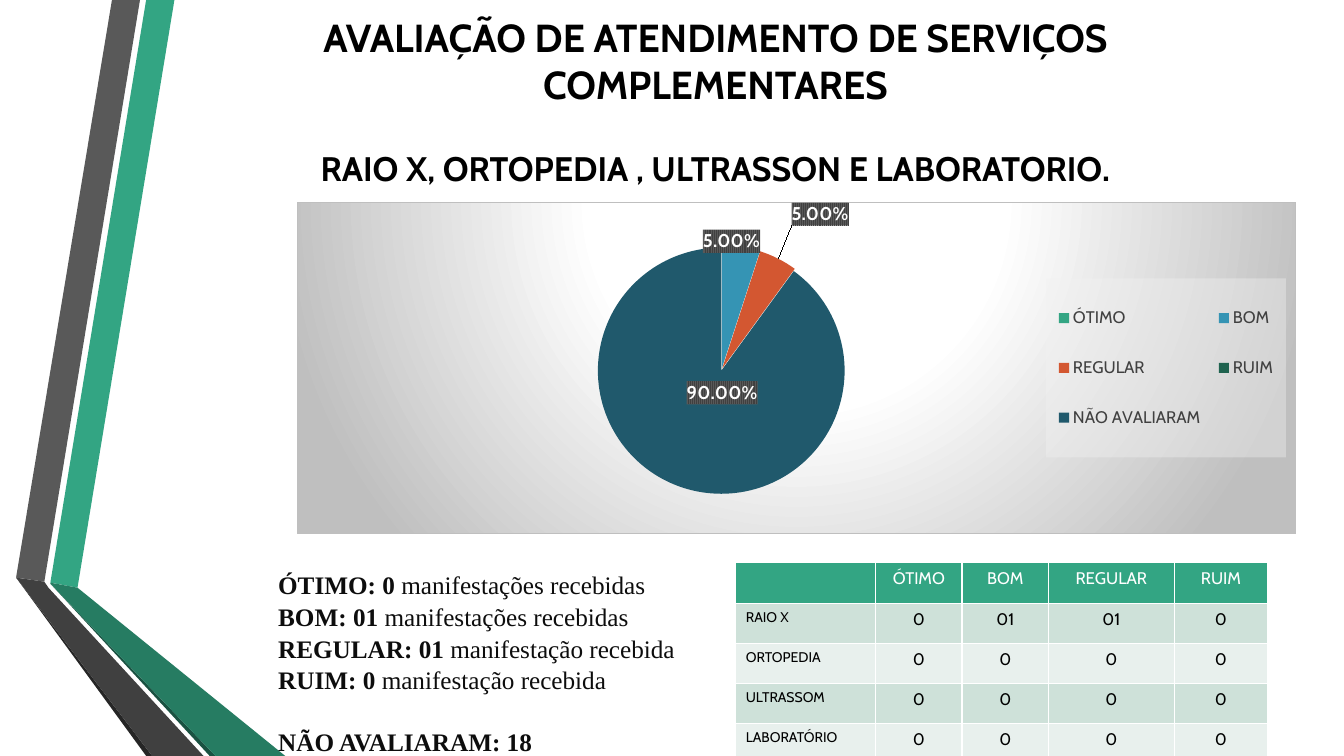
from copy import deepcopy
from dataclasses import dataclass

from pptx import Presentation, oxml, util as u
from pptx.chart.data import CategoryChartData
from pptx.dml.color import RGBColor
from pptx.enum import chart as ch, text as tx
from pptx.oxml.ns import nsdecls, qn

Pt = u.Pt


@dataclass(frozen=True)
class Theme:
    sans: str = "Cabin"
    serif: str = "Times New Roman"
    black: str = "000000"
    ink: str = "0D0D0D"
    white: str = "FFFFFF"
    green: str = "33A583"
    green_dark: str = "267C62"
    green_deep: str = "1A5242"
    gray: str = "595959"
    gray_dark: str = "404040"
    gray_deep: str = "262626"
    silver: str = "BFBFBF"
    legend_back: str = "F2F2F2"
    bands: tuple = ("CEE1D9", "E8F0ED")
    slices: tuple = ("33A583", "3594B4", "D35731", "1F634F", "20596C")
    heading: float = 27.9
    subheading: float = 24.3
    body: float = 18
    label: float = 13.3
    cell: float = 12
    row_name: float = 10


THEME = Theme()

RIBBONS = [
    (THEME.green, [(36, 416.2), (55.4, 419.8), (124.6, 0), (104.4, 0)]),
    (THEME.gray, [(100, 0), (80, 0), (11.5, 412.6), (31.7, 415.5)]),
    (THEME.gray_deep, [(11.5, 412.6), (104.4, 540), (108.7, 540)]),
    (THEME.green_deep, [(36, 416.9), (149.8, 540), (154, 540)]),
    (THEME.green_dark, [(36, 416.9), (154, 540), (203.8, 540), (55.4, 419.8), (36, 416.2)]),
    (THEME.gray_dark, [(145.4, 540), (34.6, 419.8), (31.7, 415.5), (11.5, 412.6), (108.7, 540)]),
]
RATINGS = {"ÓTIMO": 0, "BOM": 5, "REGULAR": 5, "RUIM": 0, "NÃO AVALIARAM": 90}
# Offset of each visible label from its slice centre, as a share of the chart
LABEL_OFFSETS = {1: (0, -0.2), 2: (0.07, -0.3), 4: (0.02, -0.11)}
COUNTS = [
    ("ÓTIMO: 0 ", "manifestações recebidas"),
    ("BOM: 01 ", "manifestações recebidas"),
    ("REGULAR: 01 ", "manifestação recebida"),
    ("RUIM: 0 ", "manifestação recebida"),
    ("NÃO AVALIARAM: 18", ""),
]
SERVICES = [
    ("", "ÓTIMO", "BOM", "REGULAR", "RUIM"),
    ("RAIO X", "0", "01", "01", "0"),
    ("ORTOPEDIA", "0", "0", "0", "0"),
    ("ULTRASSOM", "0", "0", "0", "0"),
    ("LABORATÓRIO", "0", "0", "0", "0"),
]


def xml(tag, inner=""):
    return oxml.parse_xml(f"<{tag} {nsdecls('a', 'c')}>{inner}</{tag}>")


def solid(color, extra=""):
    return f'<a:solidFill><a:srgbClr val="{color}">{extra}</a:srgbClr></a:solidFill>'


def manual_layout(x, y, size=None, inner=False):
    parts = '<c:layoutTarget val="inner"/>' if inner else ""
    if size:
        parts += '<c:xMode val="edge"/><c:yMode val="edge"/>'
    parts += f'<c:x val="{x}"/><c:y val="{y}"/>'
    if size:
        parts += f'<c:w val="{size[0]}"/><c:h val="{size[1]}"/>'
    return xml("c:layout", f"<c:manualLayout>{parts}</c:manualLayout>")


def set_font(font, size, color, name=THEME.sans, bold=False):
    font.size, font.name, font.bold = Pt(size), name, bold
    font.color.rgb = RGBColor.from_string(color)


def write(paragraph, words, align=None, **style):
    run = paragraph.add_run()
    run.text = words
    set_font(run.font, **style)
    if align is not None:
        paragraph.alignment = align


def place(shape, left, top, width, height):
    shape.left, shape.top, shape.width, shape.height = map(Pt, (left, top, width, height))
    frame = shape.text_frame
    frame.word_wrap, frame.auto_size = True, tx.MSO_AUTO_SIZE.NONE
    return frame


def add_ribbons(slide):
    """Draw the folded ribbons behind everything else."""
    for depth, (color, (start, *rest)) in enumerate(RIBBONS, 2):
        builder = slide.shapes.build_freeform(*map(Pt, start))
        builder.add_line_segments([tuple(map(Pt, point)) for point in rest], close=True)
        ribbon = builder.convert_to_shape()
        ribbon.shadow.inherit = False
        ribbon.fill.solid()
        ribbon.fill.fore_color.rgb = RGBColor.from_string(color)
        ribbon.line.fill.background()
        slide.shapes.element.insert(depth, ribbon.element)


def fill_title(title):
    frame = place(title, 116.6, 0, 789, 144)
    frame.vertical_anchor = tx.MSO_ANCHOR.MIDDLE
    heading, services = frame.paragraphs[0], frame.add_paragraph()
    style = dict(align=tx.PP_ALIGN.CENTER, color=THEME.black, bold=True)
    write(heading, "AVALIAÇÃO DE ATENDIMENTO DE SERVIÇOS COMPLEMENTARES",
          size=THEME.heading, **style)
    write(services, "RAIO X, ORTOPEDIA , ULTRASSON E LABORATORIO.",
          size=THEME.subheading, **style)
    services.space_before = Pt(29)


def fill_counts(body):
    frame = place(body, 191.5, 402, 342, 138)
    style = dict(size=THEME.body, color=THEME.ink, name=THEME.serif)
    for number, (rating, received) in enumerate(COUNTS):
        line = frame.add_paragraph() if number else frame.paragraphs[0]
        write(line, rating, bold=True, **style)
        if received:
            write(line, received, **style)
        line.line_spacing = 1.05
        line.space_before = Pt(0 if received else 21.6)
        properties = line._p.get_or_add_pPr()
        properties.set("marL", "0")
        properties.set("indent", "0")
        properties.append(xml("a:buNone"))


def add_ratings_chart(slide):
    ratings = CategoryChartData()
    ratings.categories = list(RATINGS)
    ratings.add_series("Series 1", list(RATINGS.values()))
    chart = slide.shapes.add_chart(
        ch.XL_CHART_TYPE.PIE, Pt(212), Pt(144), Pt(714), Pt(237.6), ratings).chart
    chart.has_title = False
    set_font(chart.font, THEME.row_name, THEME.black)
    stops = "".join(f'<a:gs pos="{at}000"><a:srgbClr val="{color}"/></a:gs>'
                    for at, color in ((0, THEME.white), (39, THEME.white), (100, THEME.silver)))
    chart.element.find(qn("c:chart")).addnext(xml(
        "c:spPr",
        f'<a:gradFill><a:gsLst>{stops}</a:gsLst><a:path path="circle">'
        '<a:fillToRect l="50000" t="-80000" r="50000" b="180000"/></a:path></a:gradFill>'
        f'<a:ln w="{Pt(0.75)}">{solid(THEME.silver)}</a:ln>'))

    plot_area = chart.element.find(".//" + qn("c:plotArea"))
    for automatic in plot_area.findall(qn("c:layout")):
        plot_area.remove(automatic)
    plot_area.insert(0, manual_layout(0.3, 0.13, (0.25, 0.75), inner=True))
    format_slices(chart.plots[0])
    format_legend(chart)


def format_slices(plot):
    plot.vary_by_categories = True
    series = plot.series[0]
    for number, color in enumerate(THEME.slices):
        area = series.points[number].format
        area.fill.solid()
        area.fill.fore_color.rgb = RGBColor.from_string(color)
        area.line.fill.background()
    explosion = xml("c:explosion")
    explosion.set("val", "1")
    series._element.find(qn("c:dPt")).addprevious(explosion)

    labels = series.data_labels
    labels.show_value, labels.show_percentage = False, True
    labels.number_format, labels.number_format_is_linked = "0.00%", False
    labels.position = ch.XL_LABEL_POSITION.CENTER
    set_font(labels.font, THEME.label, THEME.white, bold=True)
    group = labels._element
    group.find(qn("c:numFmt")).addnext(xml(
        "c:spPr",
        f'<a:pattFill prst="narVert"><a:fgClr><a:srgbClr val="{THEME.gray_dark}"/></a:fgClr>'
        f'<a:bgClr><a:srgbClr val="{THEME.gray}"/></a:bgClr></a:pattFill>'))
    shared = [part for part in group if part.tag != qn("c:showLeaderLines")]
    for number in range(len(RATINGS)):
        label = xml("c:dLbl", f'<c:idx val="{number}"/>')
        if number in LABEL_OFFSETS:
            label.append(manual_layout(*LABEL_OFFSETS[number]))
            label.extend(deepcopy(shared))
        else:
            label.append(xml("c:delete"))
            label[-1].set("val", "1")
        group.insert(number, label)


def format_legend(chart):
    chart.has_legend = True
    legend = chart.legend
    legend.position = ch.XL_LEGEND_POSITION.RIGHT
    legend.include_in_layout = False
    set_font(legend.font, THEME.cell, THEME.gray_dark)
    overlay = legend._element.find(qn("c:overlay"))
    overlay.addprevious(manual_layout(0.75, 0.23, (0.24, 0.54)))
    overlay.addnext(xml("c:spPr", solid(THEME.legend_back, '<a:alpha val="39000"/>')))


def add_services_table(slide):
    table = slide.shapes.add_table(5, 5, Pt(525.6), Pt(402), Pt(380), Pt(138)).table
    table.first_row = table.horz_banding = False
    for column, width in zip(table.columns, (100, 61.6, 61.8, 89.8, 66.8)):
        column.width = Pt(width)
    for r, values in enumerate(SERVICES):
        table.rows[r].height = Pt(28.6 if r else 23.6)
        for c, value in enumerate(values):
            cell = table.cell(r, c)
            for side in "LRTB":
                border = xml(f"a:ln{side}", solid(THEME.white))
                border.set("w", str(Pt(1)))
                cell._tc.get_or_add_tcPr().append(border)
            cell.fill.solid()
            cell.fill.fore_color.rgb = RGBColor.from_string(
                THEME.bands[(r - 1) % 2] if r else THEME.green)
            if value:
                write(cell.text_frame.paragraphs[0], value,
                      align=tx.PP_ALIGN.CENTER if c else tx.PP_ALIGN.LEFT,
                      size=THEME.cell if c else THEME.row_name,
                      color=THEME.black if r else THEME.white)


def main():
    deck = Presentation()
    deck.slide_width, deck.slide_height = Pt(960), Pt(540)
    slide = deck.slides.add_slide(deck.slide_layouts[1])
    fill_title(slide.shapes.title)
    fill_counts(slide.placeholders[1])
    add_ribbons(slide)
    add_ratings_chart(slide)
    add_services_table(slide)
    deck.save("out.pptx")


if __name__ == "__main__":
    main()
